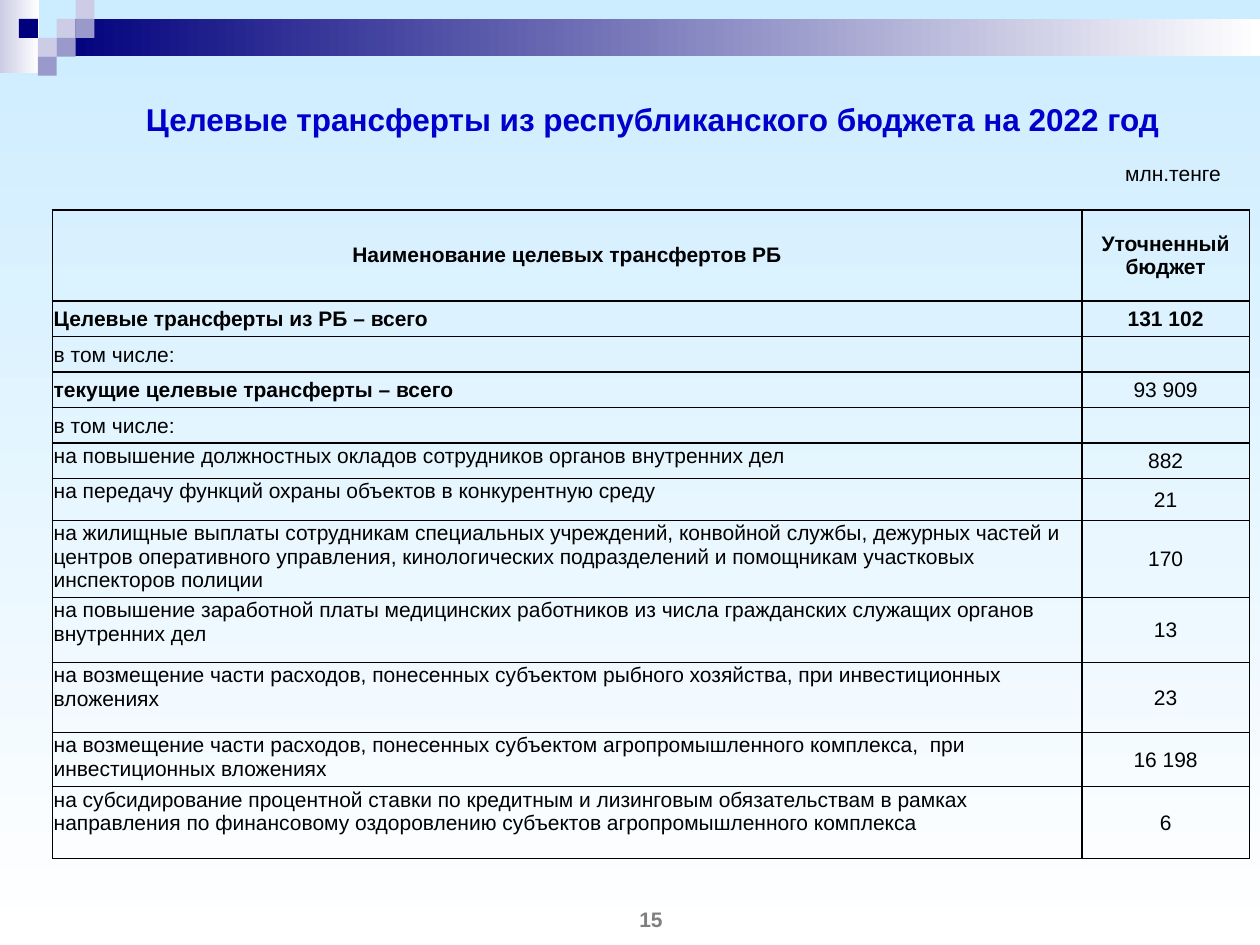
from lxml.etree import SubElement
from pptx import Presentation
from pptx.dml.color import RGBColor
from pptx.enum.shapes import MSO_SHAPE
from pptx.enum.text import MSO_ANCHOR, PP_ALIGN
from pptx.oxml.ns import qn
from pptx.util import Pt

HUES = {
    "sky": "CCECFF", "white": "FFFFFF", "navy": "00007D",
    "pale": "CCCCE6", "lilac": "9999CC", "title": "0000CC",
    "ink": "000000", "grey": "7F7F7F",
}
FONT = "Arial"
SIDE = 10.8
COLS = [588.2, 95.8]
HEAD = ["Наименование целевых трансфертов РБ", "Уточненный бюджет"]
HEAD_H = 52
TOTALS = [
    ("Целевые трансферты из РБ – всего", "131 102", True, True),
    ("в том числе:", "", False, False),
    ("текущие целевые трансферты – всего", "93 909", True, False),
    ("в том числе:", "", False, False),
]
TOTAL_H = 20.3
ITEMS = [
    ("на повышение должностных окладов сотрудников органов внутренних дел", "882", 20.3),
    ("на передачу функций охраны объектов в конкурентную среду", "21", 24),
    ("на жилищные выплаты сотрудникам специальных учреждений, конвойной службы, "
     "дежурных частей и центров оперативного управления, кинологических "
     "подразделений и помощникам участковых инспекторов полиции", "170", 40.9),
    ("на повышение заработной платы медицинских работников из числа гражданских "
     "служащих органов внутренних дел", "13", 37.1),
    ("на возмещение части расходов, понесенных субъектом рыбного хозяйства, "
     "при инвестиционных вложениях", "23", 40),
    ("на возмещение части расходов, понесенных субъектом агропромышленного "
     "комплекса,  при инвестиционных вложениях", "16 198", 31.1),
    ("на субсидирование процентной ставки по кредитным и лизинговым обязательствам "
     "в рамках направления по финансовому оздоровлению субъектов "
     "агропромышленного комплекса", "6", 41.1),
]


def tint(name):
    return RGBColor.from_string(HUES[name])


def blend(fill, start, end, angle):
    fill.gradient()
    fill.gradient_angle = angle
    for stop, name in zip(fill.gradient_stops, (start, end)):
        stop.color.rgb = tint(name)


def add_rect(slide, box, hue, end=None):
    rect = slide.shapes.add_shape(MSO_SHAPE.RECTANGLE, *map(Pt, box))
    rect.shadow.inherit = False
    rect.line.fill.background()
    if end:
        blend(rect.fill, hue, end, 0)
    else:
        rect.fill.solid()
        rect.fill.fore_color.rgb = tint(hue)


def add_run(para, text, size=12, hue="ink", bold=False):
    run = para.add_run()
    run.text = text
    run.font.name = FONT
    run.font.size = Pt(size)
    run.font.bold = bold
    run.font.color.rgb = tint(hue)


def add_text(slide, box, text, **style):
    frame = slide.shapes.add_textbox(*map(Pt, box)).text_frame
    frame.word_wrap = True
    frame.vertical_anchor = MSO_ANCHOR.MIDDLE
    para = frame.paragraphs[0]
    para.alignment = PP_ALIGN.CENTER
    add_run(para, text, **style)


def add_edges(cell):
    props = cell._tc.get_or_add_tcPr()
    for index, side in enumerate(("a:lnL", "a:lnR", "a:lnT", "a:lnB")):
        line = props.makeelement(qn(side), {"w": str(Pt(1))})
        fill = SubElement(line, qn("a:solidFill"))
        SubElement(fill, qn("a:srgbClr"), val=HUES["ink"])
        props.insert(index, line)


def fill_cell(cell, text, center, middle=True, bold=False, pad=(0.72, 0.72, 0.72, 0)):
    cell.fill.background()
    add_edges(cell)
    cell.margin_left, cell.margin_top, cell.margin_right, cell.margin_bottom = map(Pt, pad)
    cell.vertical_anchor = MSO_ANCHOR.MIDDLE if middle else MSO_ANCHOR.TOP
    para = cell.text_frame.paragraphs[0]
    para.alignment = PP_ALIGN.CENTER if center else PP_ALIGN.LEFT
    if text:
        add_run(para, text, bold=bold)
    else:
        SubElement(para._p, qn("a:endParaRPr"), sz="1200")
    return para


def add_grid(slide):
    highs = [HEAD_H] + [TOTAL_H] * len(TOTALS) + [item[2] for item in ITEMS]
    box = (30, 120, sum(COLS), sum(highs))
    table = slide.shapes.add_table(len(highs), len(COLS), *map(Pt, box)).table
    table.first_row = table.horz_banding = False
    for col, width in zip(table.columns, COLS):
        col.width = Pt(width)
    for row, high in zip(table.rows, highs):
        row.height = Pt(high)
    for col, text in enumerate(HEAD):
        para = fill_cell(table.cell(0, col), text, True, bold=True, pad=(7.2, 3.6, 7.2, 3.6))
        para.space_before = Pt(2.4)
    for row, (name, value, strong, heavy) in enumerate(TOTALS, 1):
        fill_cell(table.cell(row, 0), name, False, bold=strong)
        fill_cell(table.cell(row, 1), value, True, bold=heavy)
    for row, (name, value, _) in enumerate(ITEMS, 1 + len(TOTALS)):
        fill_cell(table.cell(row, 0), name, False, middle=False)
        fill_cell(table.cell(row, 1), value, True)


def add_decor(slide):
    add_rect(slide, (0, 0, 22.3, 41.8), "pale", "white")
    add_rect(slide, (32.4, SIDE, 687.6, 21.4), "navy", "white")
    squares = [
        (3, 1, "pale"), (4, 0, "pale"), (4, 1, "lilac"), (2, 2, "pale"),
        (1, 1, "navy"), (3, 2, "lilac"), (2, 3, "lilac"),
    ]
    for col, row, hue in squares:
        add_rect(slide, (col * SIDE, row * SIDE, SIDE, SIDE), hue)


def main():
    deck = Presentation()
    deck.slide_width, deck.slide_height = Pt(720), Pt(540)
    slide = deck.slides.add_slide(deck.slide_layouts[6])
    blend(slide.background.fill, "sky", "white", 270)
    add_decor(slide)
    add_text(slide, (31.7, 56.2, 682.6, 23.8),
             "Целевые трансферты из республиканского бюджета на 2022 год",
             size=18, hue="title", bold=True)
    add_grid(slide)
    add_text(slide, (620.6, 95.8, 99.4, 5.8), "млн.тенге")
    add_text(slide, (300, 510, 144, 30), "15", hue="grey", bold=True)
    deck.save("out.pptx")


if __name__ == "__main__":
    main()
